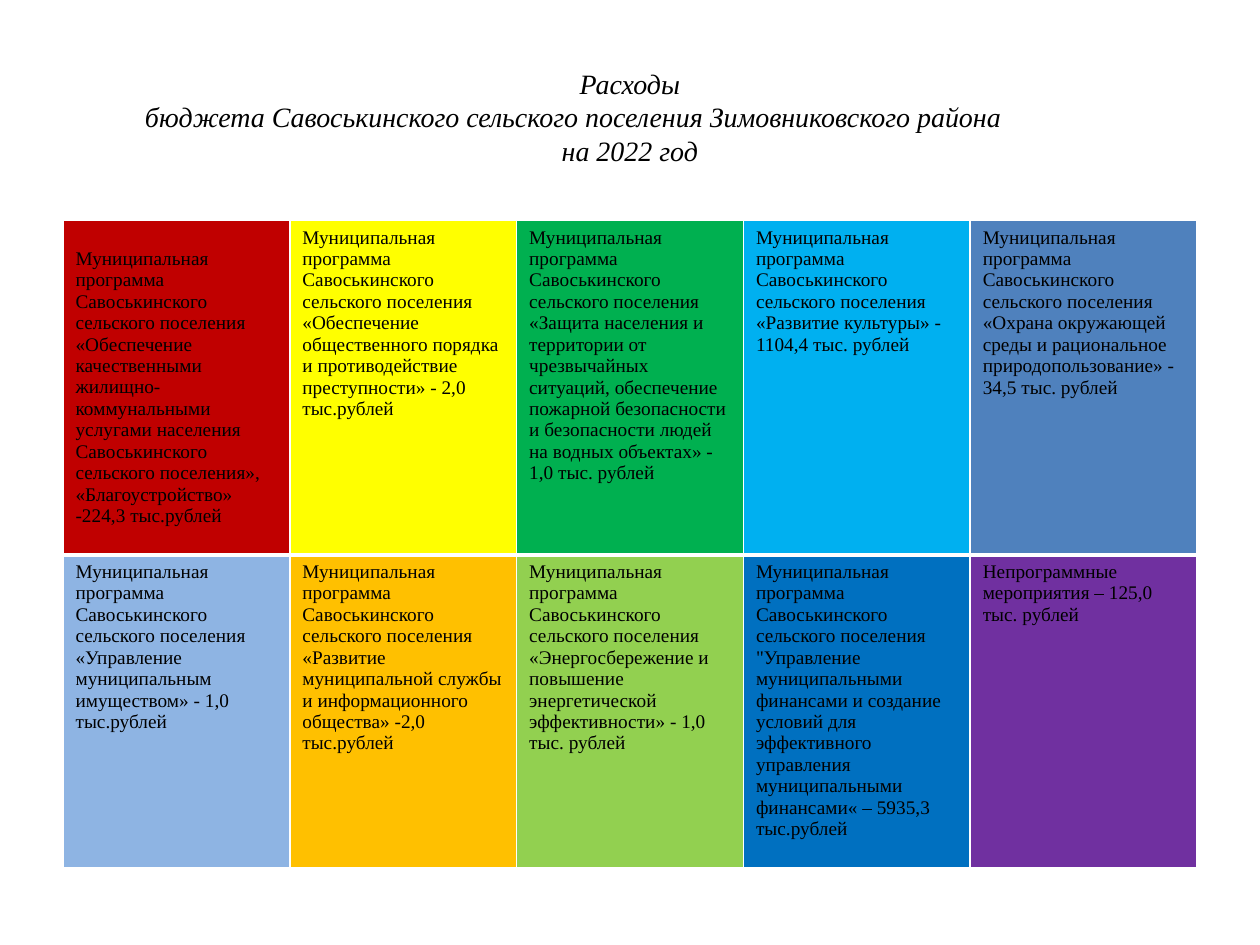
import pptx
import pptx.dml.color
import pptx.enum.text
import pptx.oxml
import pptx.oxml.ns
import pptx.util

Inches = pptx.util.Inches
Pt = pptx.util.Pt

THEME = {
    "font": "Times New Roman",
    "text": "000000",
    "border": "FFFFFF",
    "title_size": 16,
    "cell_size": 11,
    "thin": 1,
    "thick": 3,
}
HEADING = [
    ("Расходы", 0.9),
    ("бюджета Савоськинского сельского поселения Зимовниковского района", 0),
    ("на 2022 год", 0.9),
]
PROGRAM = "Муниципальная программа Савоськинского сельского поселения "
EXPENSES = [
    [
        (PROGRAM + "«Обеспечение качественными жилищно-коммунальными услугами населения "
         "Савоськинского сельского поселения», «Благоустройство» -224,3 тыс.рублей", "C00000"),
        (PROGRAM + "«Обеспечение общественного порядка и противодействие преступности» "
         "- 2,0 тыс.рублей", "FFFF00"),
        (PROGRAM + "«Защита населения и территории от чрезвычайных ситуаций, обеспечение "
         "пожарной безопасности и безопасности людей на водных объектах» "
         "- 1,0 тыс. рублей", "00B050"),
        (PROGRAM + "«Развитие культуры» - 1104,4 тыс. рублей", "00B0F0"),
        (PROGRAM + "«Охрана окружающей среды и рациональное природопользование» "
         "- 34,5 тыс. рублей", "4F81BD"),
    ],
    [
        (PROGRAM + "«Управление муниципальным имуществом» - 1,0 тыс.рублей", "8EB4E3"),
        (PROGRAM + "«Развитие муниципальной службы и информационного общества» "
         "-2,0 тыс.рублей", "FFC000"),
        (PROGRAM + "«Энергосбережение и повышение энергетической эффективности» "
         "- 1,0 тыс. рублей", "92D050"),
        (PROGRAM + "\"Управление муниципальными финансами и создание условий для эффективного "
         "управления муниципальными финансами« – 5935,3 тыс.рублей", "0070C0"),
        ("Непрограммные мероприятия – 125,0 тыс. рублей", "7030A0"),
    ],
]
ROW_HEIGHTS = [2.48, 2.31]
LEFT, WIDTH, GRID_TOP = 0.5, 9, 1.75
FIRST_CELL_TOP_MARGIN = 0.22


def rgb(value):
    """Return the colour for a hex value."""
    return pptx.dml.color.RGBColor.from_string(value)


def style(paragraph, size, italic=False):
    """Apply the theme font to each run of a paragraph."""
    for run in paragraph.runs:
        run.font.name = THEME["font"]
        run.font.size = Pt(size)
        run.font.italic = italic
        run.font.color.rgb = rgb(THEME["text"])


def set_borders(cell, widths):
    """Draw the left, right, top and bottom borders of a cell."""
    properties = cell._tc.get_or_add_tcPr()
    for position, (side, width) in enumerate(zip("LRTB", widths)):
        border = pptx.oxml.parse_xml(
            f'<a:ln{side} {pptx.oxml.ns.nsdecls("a")} w="{Pt(width)}"><a:solidFill>'
            f'<a:srgbClr val="{THEME["border"]}"/></a:solidFill></a:ln{side}>'
        )
        properties.insert(position, border)


def add_heading(slide):
    """Add the centred heading with an indent for each line."""
    box = slide.shapes.add_textbox(Inches(LEFT), Inches(0.3), Inches(WIDTH), Inches(1.25))
    frame = box.text_frame
    frame.word_wrap = True
    frame.vertical_anchor = pptx.enum.text.MSO_ANCHOR.MIDDLE
    frame.margin_right = Inches(1)
    frame.text = "\n".join(line for line, _ in HEADING)
    for paragraph, (_, indent) in zip(frame.paragraphs, HEADING):
        paragraph.alignment = pptx.enum.text.PP_ALIGN.CENTER
        paragraph._p.get_or_add_pPr().set("marL", str(Inches(indent)))
        style(paragraph, THEME["title_size"], italic=True)


def add_expenses(slide):
    """Add the coloured grid of budget expenses."""
    columns = len(EXPENSES[0])
    grid = slide.shapes.add_table(
        len(EXPENSES), columns, Inches(LEFT), Inches(GRID_TOP),
        Inches(WIDTH), Inches(sum(ROW_HEIGHTS))
    ).table
    for column in grid.columns:
        column.width = Inches(WIDTH / columns)
    thin, thick = THEME["thin"], THEME["thick"]
    for row, expenses in enumerate(EXPENSES):
        grid.rows[row].height = Inches(ROW_HEIGHTS[row])
        widths = (thin, thin, thick if row else thin, thin if row else thick)
        for column, (expense, fill) in enumerate(expenses):
            cell = grid.cell(row, column)
            cell.text_frame.text = expense
            style(cell.text_frame.paragraphs[0], THEME["cell_size"])
            cell.fill.solid()
            cell.fill.fore_color.rgb = rgb(fill)
            set_borders(cell, widths)
    grid.cell(0, 0).margin_top = Inches(FIRST_CELL_TOP_MARGIN)


def main():
    """Build the budget expenses slide."""
    deck = pptx.Presentation()
    deck.slide_width, deck.slide_height = Inches(10), Inches(7.5)
    slide = deck.slides.add_slide(deck.slide_layouts[6])
    add_heading(slide)
    add_expenses(slide)
    deck.save("out.pptx")


if __name__ == "__main__":
    main()
